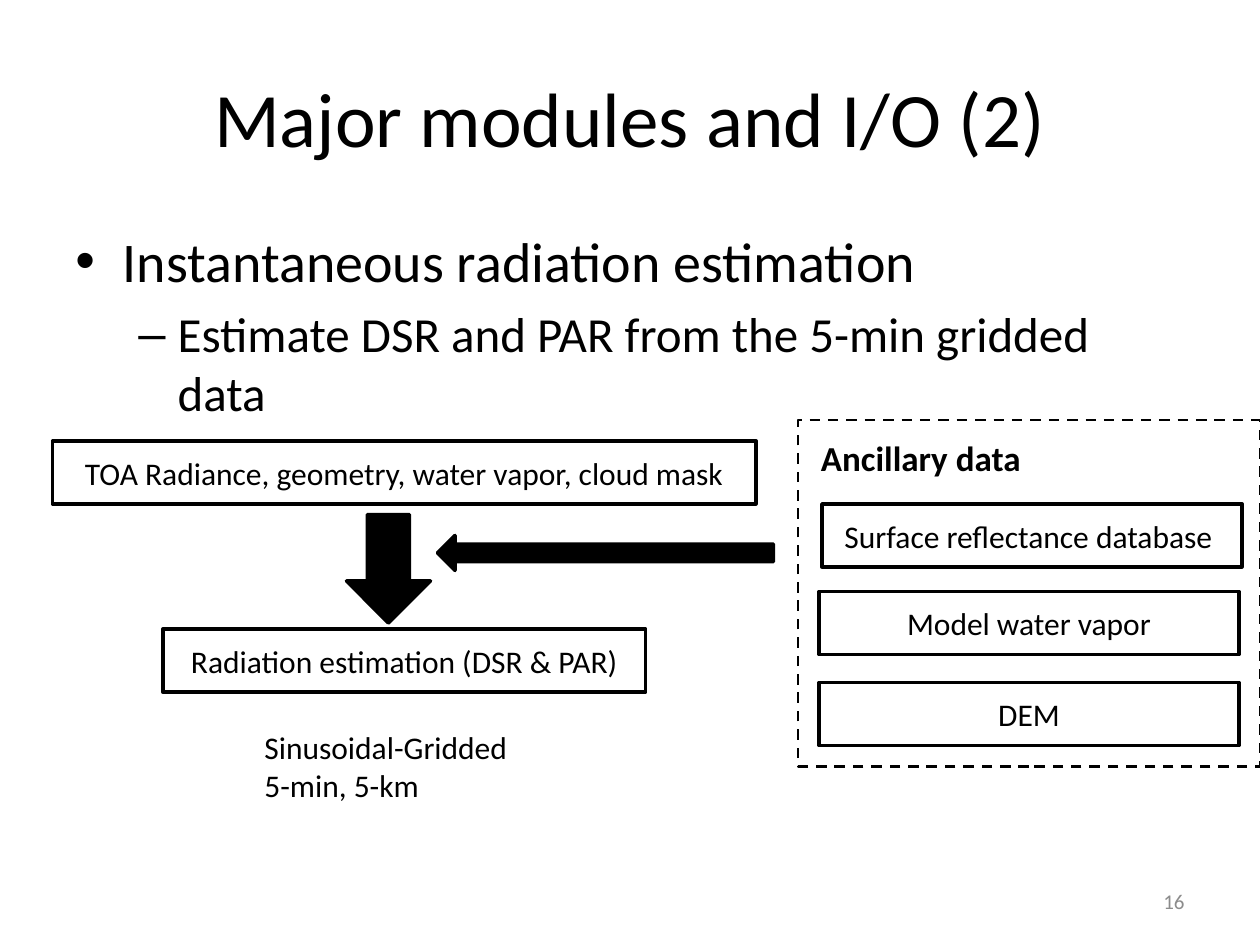
from pptx import Presentation
from pptx.dml.color import RGBColor
from pptx.enum.dml import MSO_LINE
from pptx.enum.shapes import MSO_SHAPE
from pptx.enum.text import MSO_ANCHOR, PP_ALIGN
from pptx.oxml.ns import qn
from pptx.util import Pt
from lxml.etree import SubElement

COLORS = {"ink": "000000", "muted": "8C8C8C", "paper": "FFFFFF"}
FONT = "Calibri"
BOX_HEIGHT = 36


def paint(color, name):
    color.rgb = RGBColor.from_string(COLORS[name])


def write(shape, lines, size, color="ink", bold=False, align=PP_ALIGN.LEFT,
          anchor=MSO_ANCHOR.TOP):
    """Fill a shape with one paragraph per line and return the paragraphs."""
    frame = shape.text_frame
    frame.word_wrap = True
    frame.vertical_anchor = anchor
    for index, line in enumerate(lines):
        para = frame.paragraphs[0] if index == 0 else frame.add_paragraph()
        para.alignment = align
        span = para.add_run()
        span.text = line
        for key, value in {"name": FONT, "size": Pt(size), "bold": bold}.items():
            setattr(span.font, key, value)
        paint(span.font.color, color)
    return frame.paragraphs


def add_text(page, box, lines, size, **style):
    return write(page.shapes.add_textbox(*map(Pt, box)), lines, size, **style)


def add_outline(page, box, kind=MSO_SHAPE.RECTANGLE, weight=2, filled=False):
    shape = page.shapes.add_shape(kind, *map(Pt, box))
    shape.shadow.inherit = False
    if filled:
        shape.fill.solid()
        paint(shape.fill.fore_color, "ink")
    else:
        shape.fill.background()
    paint(shape.line.color, "ink")
    shape.line.width = Pt(weight)
    return shape


def add_step(page, box, label):
    write(add_outline(page, box), [label], 18, align=PP_ALIGN.CENTER,
          anchor=MSO_ANCHOR.MIDDLE)


def add_bullets(page, box):
    items = [  # text, size, level, left margin, indent, mark
        ("Instantaneous radiation estimation", 32, 0, 27, -27, "•"),
        ("Estimate DSR and PAR from the 5-min gridded data", 28, 1, 58.5, -22.5, "–"),
    ]
    paras = add_text(page, box, [item[0] for item in items], 32)
    for para, (_, size, level, margin, indent, mark) in zip(paras, items):
        para.level = level
        para.space_before = Pt(size * 0.2)
        para.runs[0].font.size = Pt(size)
        props = para._p.get_or_add_pPr()
        props.set("marL", str(Pt(margin)))
        props.set("indent", str(Pt(indent)))
        SubElement(props, qn("a:buFont"), typeface="Arial")
        SubElement(props, qn("a:buChar"), char=mark)


def add_flow(page, box):
    left, top, width, height = box
    # Input and result boxes
    add_step(page, (left, top, width, BOX_HEIGHT),
             "TOA Radiance, geometry, water vapor, cloud mask")
    add_step(page, (left + 63, top + 107.5, 276, BOX_HEIGHT),
             "Radiation estimation (DSR & PAR)")
    # Arrows: input to result, ancillary data into the flow
    add_outline(page, (left + 168, top + 42, 48, 62), MSO_SHAPE.DOWN_ARROW, filled=True)
    add_outline(page, (left + 220, top + 54, 192, 20), MSO_SHAPE.LEFT_ARROW, filled=True)
    # Output grid
    add_text(page, (left + 114, top + 160.7, 156, 51),
             ["Sinusoidal-Gridded", "5-min, 5-km"], 18)


def add_ancillary(page, box):
    left, top, width, height = box
    sources = [  # label, offset from left, offset from top
        ("Model water vapor", 12, 98),
        ("Surface reflectance database ", 13.7, 48),
        ("DEM", 12, 150),
    ]
    for label, across, down in sources:
        add_step(page, (left + across, top + down, 240, BOX_HEIGHT), label)
    # Dashed frame and heading
    frame = add_outline(page, box, weight=1.5)
    frame.line.dash_style = MSO_LINE.DASH
    add_text(page, (left + 6, top + 6, 198, 31.5), ["Ancillary data"], 20, bold=True)


def build():
    deck = Presentation()
    deck.slide_width, deck.slide_height = Pt(720), Pt(540)
    page = deck.slides.add_slide(deck.slide_layouts[6])
    page.background.fill.solid()
    paint(page.background.fill.fore_color, "paper")

    add_text(page, (36, 21.6, 648, 90), ["Major modules and I/O (2)"], 44,
             align=PP_ALIGN.CENTER, anchor=MSO_ANCHOR.MIDDLE)
    add_bullets(page, (36, 126, 648, 356.4))
    add_flow(page, (30, 252, 402, 212))
    add_ancillary(page, (456, 240, 264, 198))
    # Page number
    add_text(page, (516, 500.5, 168, 28.75), ["16"], 12, color="muted",
             align=PP_ALIGN.RIGHT, anchor=MSO_ANCHOR.MIDDLE)
    deck.save("out.pptx")


if __name__ == "__main__":
    build()
